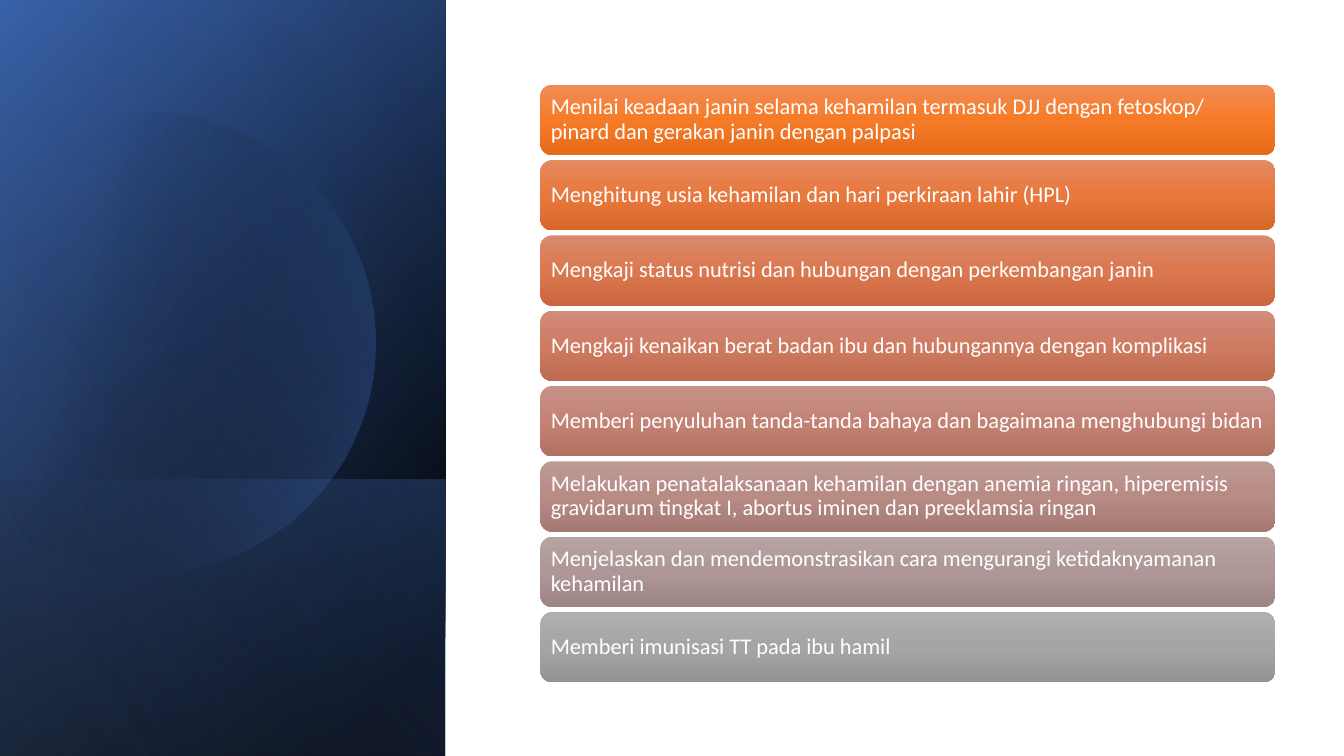
from dataclasses import dataclass
from math import acos, cos, sin

from lxml.etree import SubElement
from pptx import Presentation
from pptx.dml.color import RGBColor
from pptx.enum.shapes import MSO_SHAPE
from pptx.enum.text import MSO_ANCHOR, PP_ALIGN
from pptx.oxml.ns import qn
from pptx.util import Pt


@dataclass(frozen=True)
class Theme:
    """Colours and type of the slide."""
    font: str = "Calibri"
    size: int = 16
    text: str = "FFFFFF"
    black: str = "000000"
    navy: str = "2F5597"
    blue: str = "4472C4"
    pale: str = "8FAADC"
    bars: tuple = (
        ("F18C57", "F67B28", "E56C19"),
        ("E58A61", "E8783C", "D7682C"),
        ("DA8A6E", "DB7850", "CA673F"),
        ("D08D7B", "CF7B62", "BD6B52"),
        ("C79288", "C38274", "B17163"),
        ("BE9A95", "B88B85", "A67A74"),
        ("B6A4A2", "AE9796", "9C8584"),
        ("AFAFAF", "A5A5A5", "939393"),
    )


class SlideBuilder:
    """Draws gradient elements on one slide, with lengths in points."""

    def __init__(self, slide, theme):
        """Keep the slide and its style."""
        self.s = slide
        self.theme = theme

    def gradient(self, sp, stops, angle):
        """Fill a shape with (position, colour, opacity) stops, in percent."""
        sp.shadow.inherit = False
        sp.line.fill.background()
        sp.fill.gradient()
        grad = sp._element.spPr.find(qn("a:gradFill"))
        for child in list(grad):
            grad.remove(child)
        grad.set("rotWithShape", "1")
        gs_list = SubElement(grad, qn("a:gsLst"))
        for pos, color, opacity in stops:
            gs = SubElement(gs_list, qn("a:gs"), pos=str(pos * 1000))
            clr = SubElement(gs, qn("a:srgbClr"), val=color)
            if opacity < 100:
                SubElement(clr, qn("a:alpha"), val=str(opacity * 1000))
        SubElement(grad, qn("a:lin"), ang=str(angle * 60000), scaled="0")

    def panel(self, x, y, w, h, stops, angle):
        """Add a mirrored rectangle, turned a quarter, that covers the box."""
        left, top = x + (w - h) / 2, y + (h - w) / 2
        sp = self.s.shapes.add_shape(MSO_SHAPE.RECTANGLE, Pt(left), Pt(top), Pt(h), Pt(w))
        sp.rotation = 90
        sp._element.spPr.find(qn("a:xfrm")).set("flipH", "1")
        self.gradient(sp, stops, angle)

    def cut_circle(self, cx, cy, radius, left, stops, angle, steps=120):
        """Add a circle cut off by a vertical line at left."""
        limit = acos((left - cx) / radius)
        turns = [limit * (2 * i / steps - 1) for i in range(steps + 1)]
        points = [(Pt(cx + radius * cos(t)), Pt(cy + radius * sin(t))) for t in turns]
        outline = self.s.shapes.build_freeform(*points[0])
        outline.add_line_segments(points[1:], close=True)
        self.gradient(outline.convert_to_shape(), stops, angle)

    def bar(self, x, y, w, h, text, colors):
        """Add a rounded bar with left-aligned text."""
        sp = self.s.shapes.add_shape(MSO_SHAPE.ROUNDED_RECTANGLE, Pt(x), Pt(y), Pt(w), Pt(h))
        self.gradient(sp, [(50 * i, c, 100) for i, c in enumerate(colors)], 90)
        tf = sp.text_frame
        tf.word_wrap = True
        tf.vertical_anchor = MSO_ANCHOR.MIDDLE
        tf.margin_left = tf.margin_right = tf.margin_top = tf.margin_bottom = Pt(5)
        p = tf.paragraphs[0]
        p.alignment = PP_ALIGN.LEFT
        p.line_spacing = 0.9
        r = p.add_run()
        r.text = text
        r.font.name = self.theme.font
        r.font.size = Pt(self.theme.size)
        r.font.color.rgb = RGBColor.from_string(self.theme.text)


TASKS = (
    "Menilai keadaan janin selama kehamilan termasuk DJJ dengan fetoskop/ pinard dan gerakan janin dengan palpasi",
    "Menghitung usia kehamilan dan hari perkiraan lahir (HPL)",
    "Mengkaji status nutrisi dan hubungan dengan perkembangan janin",
    "Mengkaji kenaikan berat badan ibu dan hubungannya dengan komplikasi",
    "Memberi penyuluhan tanda-tanda bahaya dan bagaimana menghubungi bidan",
    "Melakukan penatalaksanaan kehamilan dengan anemia ringan, hiperemisis gravidarum tingkat I, "
    "abortus iminen dan preeklamsia ringan",
    "Menjelaskan dan mendemonstrasikan cara mengurangi ketidaknyamanan kehamilan",
    "Memberi imunisasi TT pada ibu hamil",
)


def main():
    """Build the slide and save it."""
    prs = Presentation()
    prs.slide_width, prs.slide_height = Pt(960), Pt(540)
    theme = Theme()
    slide = SlideBuilder(prs.slides.add_slide(prs.slide_layouts[6]), theme)

    side = (0, 0, 318.2, 540)
    slide.panel(*side, [(8, theme.black, 100), (100, theme.navy, 100)], 50)
    slide.panel(*side, [(0, theme.black, 0), (99, theme.blue, 46)], 30)
    slide.panel(0, 342.7, 318.2, 197.3, [(2, theme.blue, 29), (100, theme.black, 30)], 130)
    slide.cut_circle(103, 244.8, 165, -11, [(29, theme.black, 0), (100, theme.blue, 43)], 14)
    slide.panel(*side, [(0, theme.black, 0), (99, theme.pale, 11)], 120)

    for i, (task, colors) in enumerate(zip(TASKS, theme.bars)):
        slide.bar(386, 60.5 + 53.8 * i, 525, 50.2, task, colors)

    prs.save("out.pptx")


if __name__ == "__main__":
    main()
